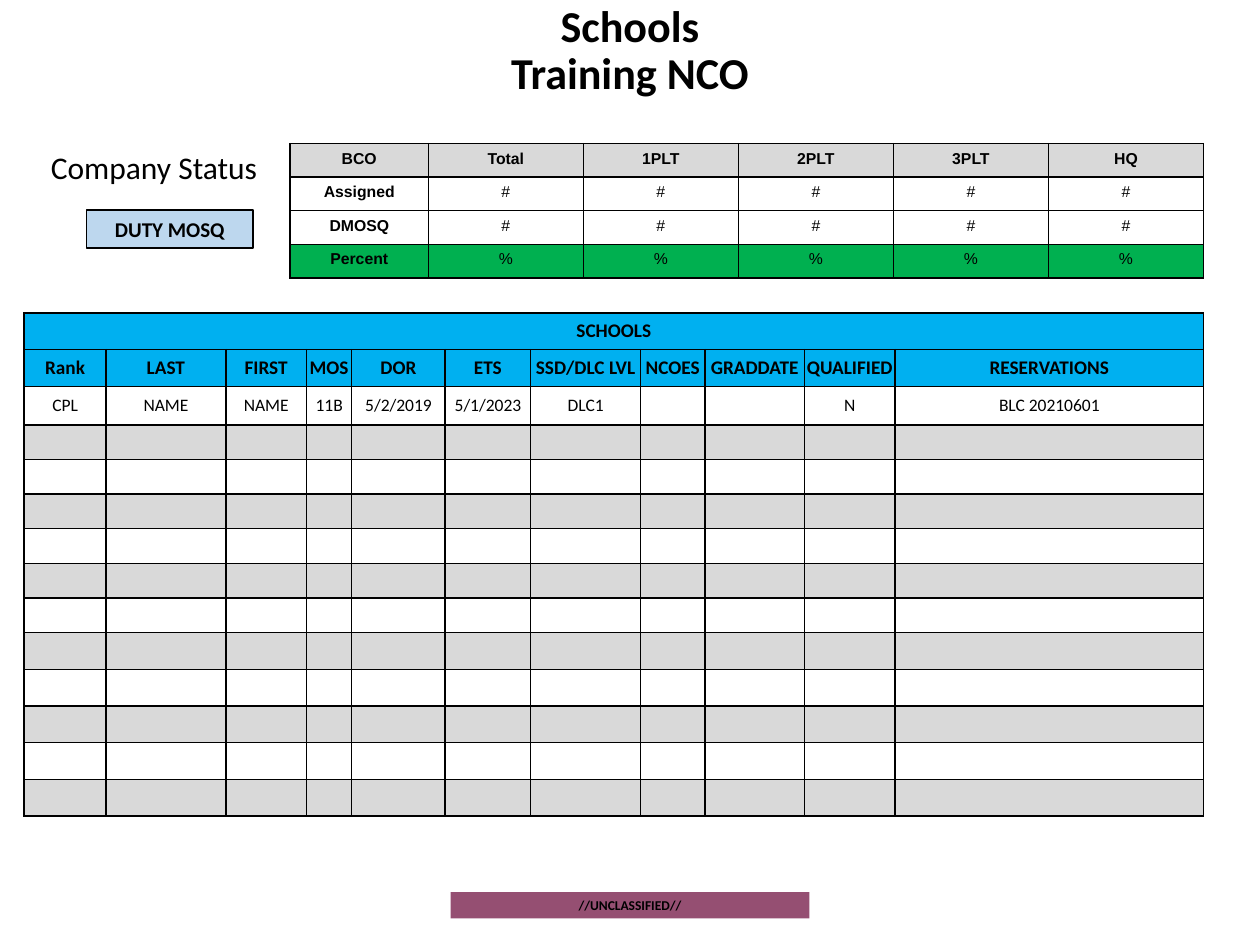
from lxml import etree
from pptx import Presentation
from pptx.dml.color import RGBColor
from pptx.enum.shapes import MSO_SHAPE
from pptx.enum.text import MSO_ANCHOR, MSO_AUTO_SIZE, PP_ALIGN
from pptx.oxml.ns import qn
from pptx.util import Pt

CENTER, LEFT = PP_ALIGN.CENTER, PP_ALIGN.LEFT
MIDDLE, TOP = MSO_ANCHOR.MIDDLE, MSO_ANCHOR.TOP
RECTANGLE = MSO_SHAPE.RECTANGLE
BLACK, WHITE, GRAY = "000000", "FFFFFF", "D9D9D9"
BLUE, PALE_BLUE, GREEN, PLUM = "00B0F0", "BDD7EE", "00B050", "954F72"

TITLE = "Schools\vTraining NCO"
STATUS_ROWS = [
    ["BCO", "Total", "1PLT", "2PLT", "3PLT", "HQ"],
    ["Assigned"] + ["#"] * 5,
    ["DMOSQ"] + ["#"] * 5,
    ["Percent"] + ["%"] * 5,
]
STATUS_FILLS = [GRAY, WHITE, WHITE, GREEN]
STATUS_WIDTHS = [79] + [88.6] * 5
STATUS_HEIGHTS = [19.2] * 4

SCHOOL_COLUMNS = [
    ("Rank", 46.8), ("LAST", 68.4), ("FIRST", 46.2), ("MOS", 25.8),
    ("DOR", 53.4), ("ETS", 48.9), ("SSD/DLC LVL", 62.8), ("NCOES", 36.8),
    ("GRADDATE", 57), ("QUALIFIED", 51.6), ("RESERVATIONS", 176.4),
]
SOLDIERS = [["CPL", "NAME", "NAME", "11B", "5/2/2019", "5/1/2023", "DLC1",
             "", "", "N", "BLC 20210601"]]
EMPTY_ROWS = 11
SCHOOL_HEIGHTS = [21, 21, 22] + [19.8] * 6 + [21] * 5


def rgb(color):
    return RGBColor.from_string(color)


def write(frame, text, size, bold=False, font="Calibri", align=CENTER):
    frame.text = text
    paragraph = frame.paragraphs[0]
    paragraph.alignment = align
    for run in paragraph.runs:
        for key, value in {"name": font, "size": Pt(size), "bold": bold}.items():
            setattr(run.font, key, value)
        run.font.color.rgb = rgb(BLACK)
    if not text:
        # An empty paragraph takes its height from its end mark.
        end = etree.SubElement(paragraph._p, qn("a:endParaRPr"))
        end.set("sz", str(size * 100))


def add_borders(cell):
    properties = cell._tc.get_or_add_tcPr()
    for side in ("lnL", "lnR", "lnT", "lnB"):
        line = etree.SubElement(properties, qn(f"a:{side}"), w=str(Pt(1)))
        fill = etree.SubElement(line, qn("a:solidFill"))
        etree.SubElement(fill, qn("a:srgbClr"), val=BLACK)


def add_grid(slide, left, top, widths, heights, rows, style):
    """Add a bordered table; style(row, column) gives fill, size, bold, font."""
    table = slide.shapes.add_table(
        len(heights), len(widths), Pt(left), Pt(top),
        Pt(sum(widths)), Pt(sum(heights))).table
    table.first_row = table.horz_banding = False
    for column, width in zip(table.columns, widths):
        column.width = Pt(width)
    for r, (row, height) in enumerate(zip(rows, heights)):
        table.rows[r].height = Pt(height)
        for c, text in enumerate(row):
            cell = table.cell(r, c)
            fill, size, bold, font = style(r, c)
            write(cell.text_frame, text, size, bold, font)
            add_borders(cell)
            cell.fill.solid()
            cell.fill.fore_color.rgb = rgb(fill)
    return table


def add_box(slide, bounds, text, size, fill, outline=None):
    box = slide.shapes.add_shape(RECTANGLE, *map(Pt, bounds))
    box.shadow.inherit = False
    box.fill.solid()
    box.fill.fore_color.rgb = rgb(fill)
    if outline:
        box.line.color.rgb = rgb(outline)
        box.line.width = Pt(1)
    else:
        box.line.fill.background()
    frame = box.text_frame
    frame.margin_top = frame.margin_bottom = Pt(3)
    frame.vertical_anchor = MIDDLE
    write(frame, text, size, bold=True)


def status_style(row, column):
    return STATUS_FILLS[row], 9, row == 0 or column == 0, "Arial"


def school_style(row, column):
    if row < 2:
        return BLUE, 11, True, "Calibri"
    return (GRAY if row % 2 else WHITE), 10, False, "Calibri"


def main():
    deck = Presentation()
    deck.slide_width, deck.slide_height = Pt(720), Pt(540)
    slide = deck.slides.add_slide(deck.slide_layouts[5])

    title = slide.shapes.title
    title.left, title.top, title.width, title.height = map(Pt, (49.7, 6.5, 620.6, 46))
    write(title.text_frame, TITLE, 25.2, bold=True)
    title.text_frame.paragraphs[0].line_spacing = 0.9
    title.text_frame.vertical_anchor = MIDDLE
    title.text_frame.auto_size = MSO_AUTO_SIZE.NONE

    add_box(slide, (257.5, 509.8, 205, 15), "//UNCLASSIFIED//", 7.7, PLUM)

    names, widths = zip(*SCHOOL_COLUMNS)
    blank = [""] * len(names)
    school_rows = [["SCHOOLS"] + blank[1:], names, *SOLDIERS] + [blank] * EMPTY_ROWS
    schools = add_grid(slide, 13.8, 178.8, widths, SCHOOL_HEIGHTS, school_rows,
                       school_style)
    for cell in schools.iter_cells():
        cell.vertical_anchor = MIDDLE
        for side in ("left", "right", "top", "bottom"):
            setattr(cell, f"margin_{side}", 0)
    schools.cell(0, 0).merge(schools.cell(0, len(names) - 1))

    add_box(slide, (49.5, 120, 95.2, 21.8), "DUTY MOSQ", 12, PALE_BLUE, BLACK)
    add_grid(slide, 165.8, 82, STATUS_WIDTHS, STATUS_HEIGHTS, STATUS_ROWS,
             status_style)

    label = slide.shapes.add_textbox(*map(Pt, (22, 81, 180, 29))).text_frame
    label.word_wrap = True
    label.vertical_anchor = TOP
    write(label, "Company Status", 18, align=LEFT)

    deck.save("out.pptx")


if __name__ == "__main__":
    main()
